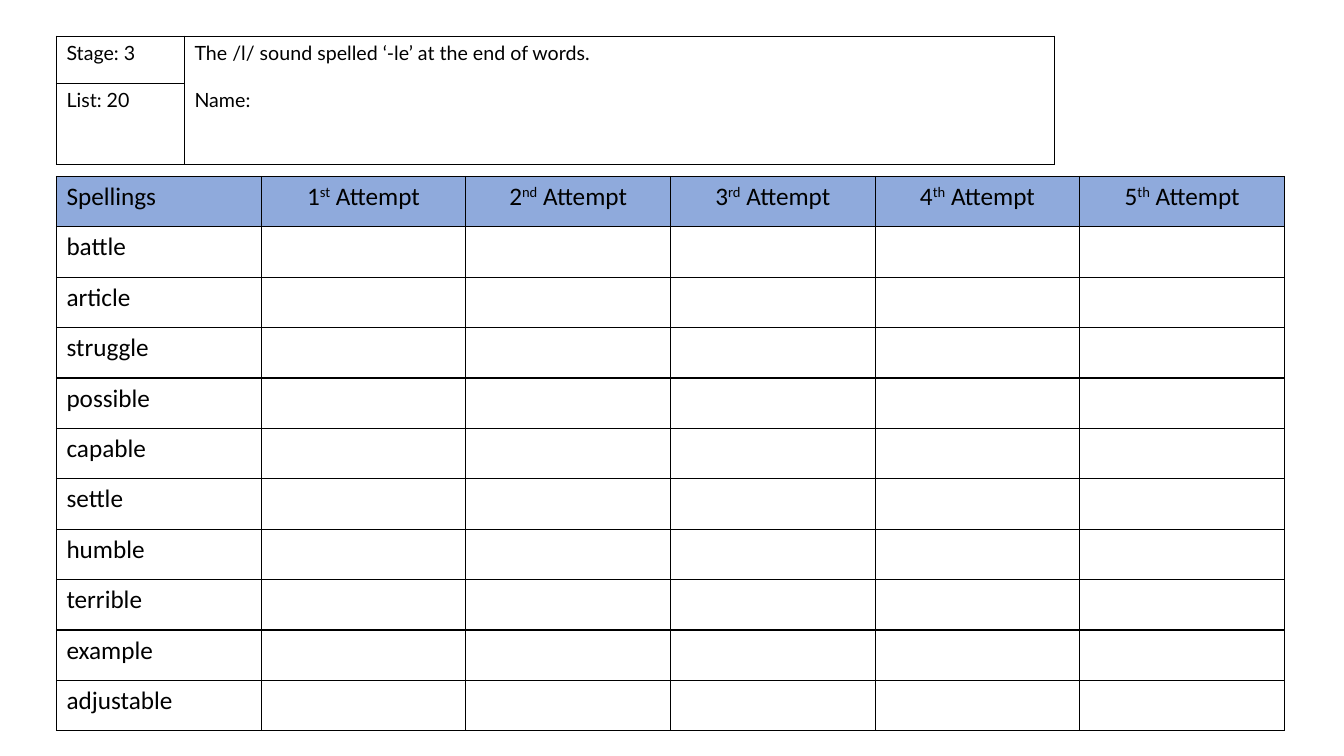
from lxml import etree
from pptx import Presentation
from pptx import util as u
from pptx.dml.color import RGBColor
from pptx.enum import text
from pptx.oxml.ns import qn

COLOURS = {"ink": "000000", "header": "8FAADC"}
WORDS = ["battle", "article", "struggle", "possible", "capable",
         "settle", "humble", "terrible", "example", "adjustable"]
ORDINALS = ["st", "nd", "rd", "th", "th"]


def add_grid(left, top, widths, heights):
    """Add an unfilled table with thin black borders around every cell."""
    grid = slide.shapes.add_table(
        len(heights), len(widths), u.Inches(left), u.Inches(top),
        u.Inches(sum(widths)), u.Inches(sum(heights))).table
    grid.first_row = grid.horz_banding = False
    for column, width in zip(grid.columns, widths):
        column.width = u.Inches(width)
    for row, height in zip(grid.rows, heights):
        row.height = u.Inches(height)
        for cell in row.cells:
            props = cell._tc.get_or_add_tcPr()
            for side in ("lnL", "lnR", "lnT", "lnB"):
                border = etree.SubElement(props, qn("a:" + side), w=str(u.Pt(1)))
                solid = etree.SubElement(border, qn("a:solidFill"))
                etree.SubElement(solid, qn("a:srgbClr"), val=COLOURS["ink"])
            cell.fill.background()
    return grid


def add_run(paragraph, words, font, size, baseline=0):
    run = paragraph.add_run()
    run.text = words
    run.font.name = font
    run.font.size = u.Pt(size)
    run.font.color.rgb = RGBColor.from_string(COLOURS["ink"])
    if baseline:
        run._r.get_or_add_rPr().set("baseline", str(baseline * 1000))


prs = Presentation()
prs.slide_width, prs.slide_height = u.Inches(13.33), u.Inches(7.5)
slide = prs.slides.add_slide(prs.slide_layouts[6])

# Spelling practice table
practice = add_grid(0.56, 1.75, [2.03] * 6, [0.5] * 11)
for row, word in enumerate(["Spellings"] + WORDS):
    add_run(practice.cell(row, 0).text_frame.paragraphs[0], word, "Calibri", 18)

for cell in practice.rows[0].cells:
    cell.fill.solid()
    cell.fill.fore_color.rgb = RGBColor.from_string(COLOURS["header"])

for attempt, ordinal in enumerate(ORDINALS, 1):
    heading = practice.cell(0, attempt).text_frame.paragraphs[0]
    heading.alignment = text.PP_ALIGN.CENTER
    add_run(heading, str(attempt), "Calibri", 18)
    add_run(heading, ordinal, "Calibri", 18, baseline=30)
    add_run(heading, " Attempt", "Calibri", 18)

# Lesson details
details = add_grid(0.56, 0.36, [1.27, 8.63], [0.47, 0.8])
details.cell(0, 1).merge(details.cell(1, 1))
topic = details.cell(0, 1).text_frame
pupil = topic.add_paragraph()
pupil.space_before = u.Pt(17)
for paragraph, words in [
    (details.cell(0, 0).text_frame.paragraphs[0], "Stage: 3"),
    (details.cell(1, 0).text_frame.paragraphs[0], "List: 20"),
    (topic.paragraphs[0], "The /l/ sound spelled ‘-le’ at the end of words."),
    (pupil, "Name:"),
]:
    add_run(paragraph, words, "Lato", 14)

prs.save("out.pptx")
